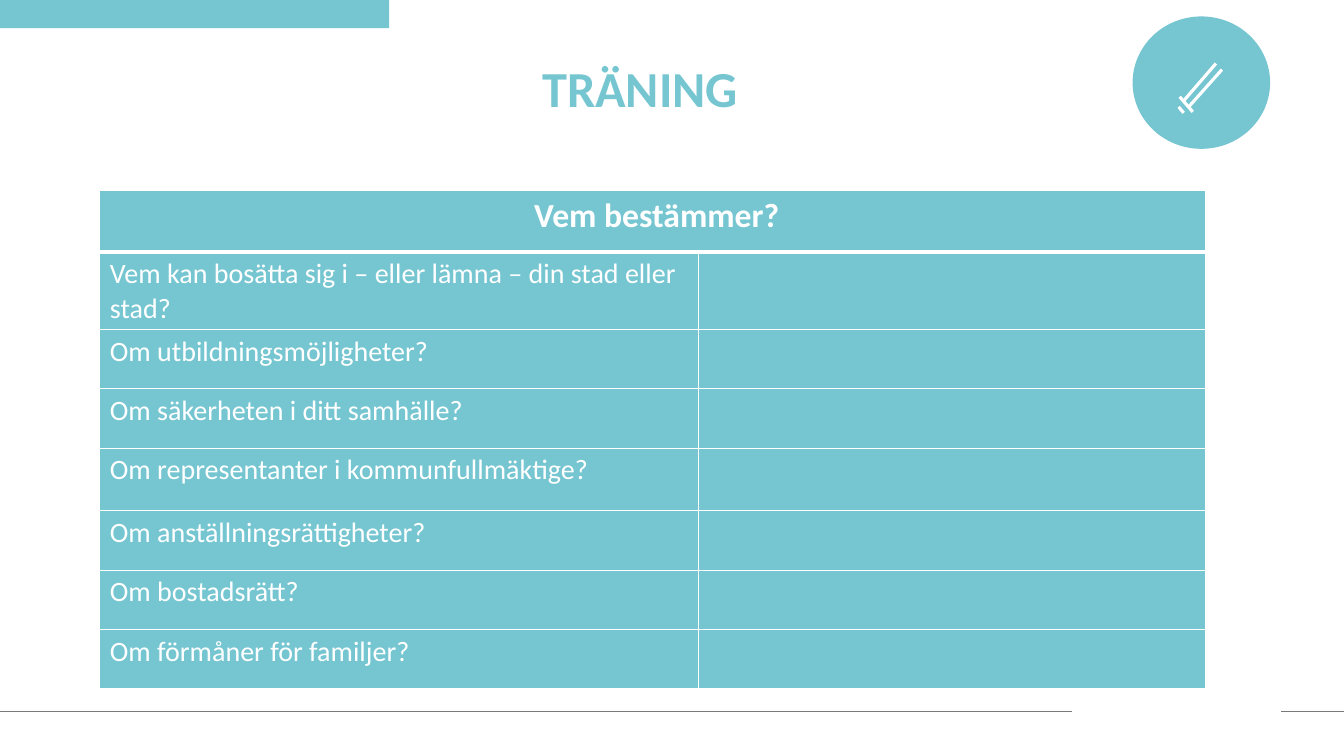
import lxml.etree
import pptx
import pptx.dml.color
import pptx.enum.shapes
import pptx.enum.text
import pptx.oxml.ns
import pptx.util

Inches = pptx.util.Inches
Pt = pptx.util.Pt
SHAPES = pptx.enum.shapes.MSO_SHAPE
TEAL, WHITE, GREY = "76C6D2", "FFFFFF", "797979"
FONT = "Calibri"
QUESTIONS = [
    "Vem kan bosätta sig i – eller lämna – din stad eller stad?",
    "Om utbildningsmöjligheter?",
    "Om säkerheten i ditt samhälle?",
    "Om representanter i kommunfullmäktige?",
    "Om anställningsrättigheter?",
    "Om bostadsrätt?",
    "Om förmåner för familjer?",
]


def rgb(colour):
    return pptx.dml.color.RGBColor.from_string(colour)


def add_run(paragraph, text, size, colour, bold=False):
    run = paragraph.add_run()
    run.text = text
    run.font.name = FONT
    run.font.size = Pt(size)
    run.font.bold = bold
    run.font.color.rgb = rgb(colour)


def add_filled(slide, kind, left, top, width, height, colour):
    shape = slide.shapes.add_shape(
        kind, Inches(left), Inches(top), Inches(width), Inches(height))
    shape.shadow.inherit = False
    shape.fill.solid()
    shape.fill.fore_color.rgb = rgb(colour)
    shape.line.fill.background()
    return shape


def add_line(slide, start, end, colour, weight):
    line = slide.shapes.add_connector(
        pptx.enum.shapes.MSO_CONNECTOR.STRAIGHT,
        *(Inches(value) for value in (*start, *end)))
    line.line.color.rgb = rgb(colour)
    line.line.width = Pt(weight)
    properties = line._element.spPr
    lxml.etree.SubElement(properties, pptx.oxml.ns.qn("a:effectLst"))


def add_frame(slide, width):
    add_filled(slide, SHAPES.RECTANGLE, 0, 0, 3.86, 0.28, TEAL)
    for start, end in ((0, 10.63), (12.71, width)):
        add_line(slide, (start, 7.06), (end, 7.06), GREY, 0.5)


def add_heading(slide, left, top, width, height):
    heading = slide.shapes.add_textbox(
        Inches(left), Inches(top), Inches(width), Inches(height))
    heading.text_frame.word_wrap = True
    paragraph = heading.text_frame.paragraphs[0]
    paragraph.line_spacing = 0.9
    add_run(paragraph, "TRÄNING", 36, TEAL, True)


def add_pencil_badge(slide, left, top, width, height):
    disc = add_filled(
        slide, SHAPES.FLOWCHART_CONNECTOR, left, top, width, height, TEAL)
    disc.line.color.rgb = rgb(TEAL)
    disc.line.width = Pt(1)

    eraser = [(0.97, 0.48), (0.86, 0.35), (0.85, 0.35), (0.84, 0.35),
              (0.79, 0.41), (0.92, 0.56), (0.97, 0.51), (0.98, 0.49)]
    body = [(0.78, 0.42), (0.46, 0.79), (0.45, 0.8), (0.43, 0.94),
            (0.44, 0.96), (0.45, 0.97), (0.58, 0.94), (0.59, 0.94),
            (0.92, 0.57)]
    for points, closed in ((eraser, True), (body, False)):
        placed = [(left + x, top + y) for x, y in points]
        builder = slide.shapes.build_freeform(
            *placed[0], scale=float(Inches(1)))
        builder.add_line_segments(placed[1:], close=closed)
        outline = builder.convert_to_shape()
        outline.shadow.inherit = False
        outline.fill.background()
        outline.line.color.rgb = rgb(WHITE)
        outline.line.width = Pt(2.25)

    details = [((0.88, 0.52), (0.55, 0.89)), ((0.5, 0.83), (0.82, 0.46)),
               ((0.5, 0.95), (0.45, 0.89)), ((0.46, 0.79), (0.59, 0.94))]
    for start, end in details:
        add_line(slide, (left + start[0], top + start[1]),
                 (left + end[0], top + end[1]), WHITE, 2.25)


def style_cell(cell, top_weight, bottom_weight):
    properties = cell._tc.get_or_add_tcPr()
    weights = {"lnL": 1, "lnR": 1, "lnT": top_weight, "lnB": bottom_weight}
    for side, weight in weights.items():
        border = lxml.etree.SubElement(
            properties, pptx.oxml.ns.qn("a:" + side), w=str(Pt(weight)))
        fill = lxml.etree.SubElement(border, pptx.oxml.ns.qn("a:solidFill"))
        lxml.etree.SubElement(
            fill, pptx.oxml.ns.qn("a:srgbClr"), val=WHITE)
    cell.fill.solid()
    cell.fill.fore_color.rgb = rgb(TEAL)


def add_question_table(slide, left, top, width, height):
    row_heights = [0.61, 0.59, 0.59, 0.59, 0.62, 0.59, 0.59, 0.59]
    question_width = 5.94
    table = slide.shapes.add_table(
        len(row_heights), 2, Inches(left), Inches(top),
        Inches(width), Inches(height)).table
    table.columns[0].width = Inches(question_width)
    table.columns[1].width = Inches(width - question_width)
    for index, row_height in enumerate(row_heights):
        table.rows[index].height = Inches(row_height)
        for cell in table.rows[index].cells:
            style_cell(cell, 3 if index == 1 else 1, 3 if index == 0 else 1)

    header = table.cell(0, 0)
    header.merge(table.cell(0, 1))
    paragraph = header.text_frame.paragraphs[0]
    paragraph.alignment = pptx.enum.text.PP_ALIGN.CENTER
    add_run(paragraph, " Vem bestämmer?", 24, WHITE, True)
    for index, question in enumerate(QUESTIONS, 1):
        paragraph = table.cell(index, 0).text_frame.paragraphs[0]
        add_run(paragraph, question, 20, WHITE)


def main():
    deck = pptx.Presentation()
    deck.slide_width = Inches(13.33)
    deck.slide_height = Inches(7.5)
    slide = deck.slides.add_slide(deck.slide_layouts[6])
    add_frame(slide, 13.33)
    add_heading(slide, 5.28, 0.59, 2.33, 0.69)
    add_pencil_badge(slide, 11.24, 0.17, 1.35, 1.3)
    add_question_table(slide, 0.99, 1.89, 10.97, 4.77)
    deck.save("out.pptx")


if __name__ == "__main__":
    main()
